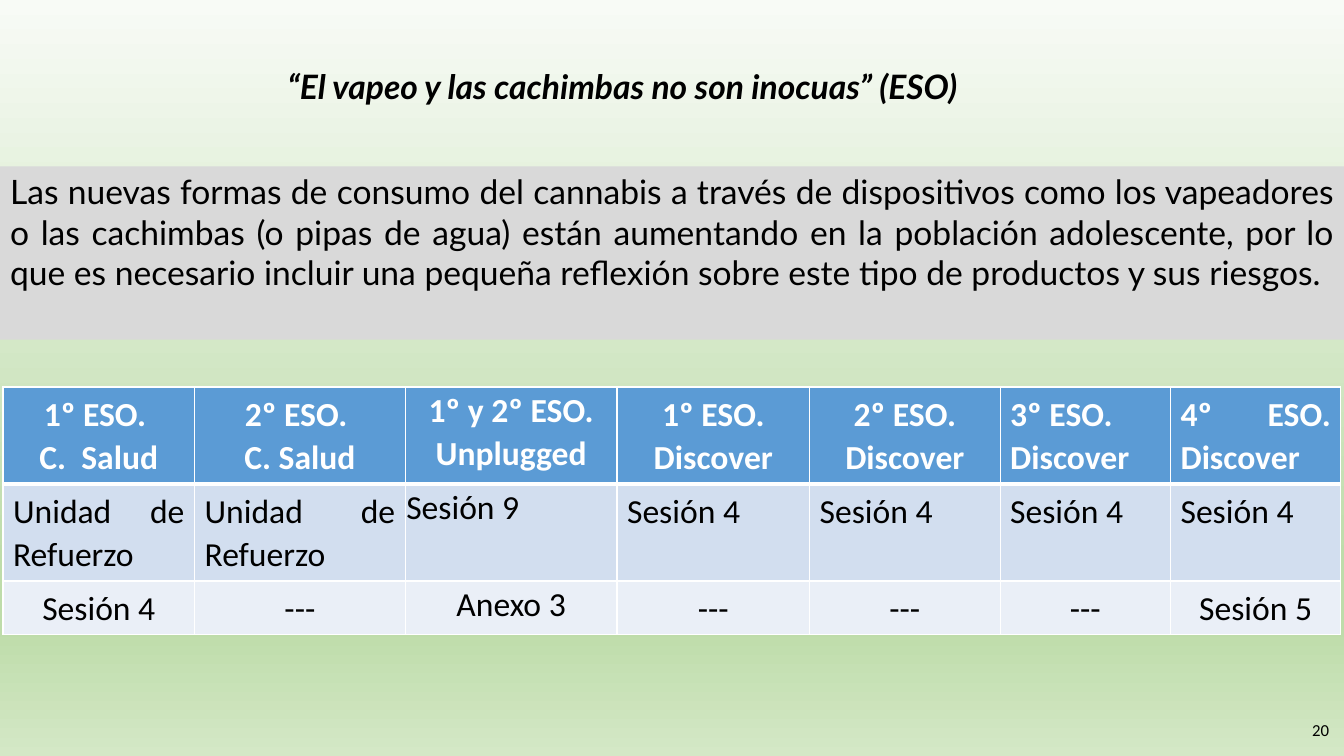
from lxml import etree
from pptx import Presentation
from pptx.dml.color import RGBColor
from pptx.enum import text
from pptx.oxml import ns
from pptx.util import Inches, Pt

TITLE = "“El vapeo y las cachimbas no son inocuas” (ESO)"
BODY = (
    "Las nuevas formas de consumo del cannabis a través de dispositivos como los "
    "vapeadores o las cachimbas (o pipas de agua) están aumentando en la población "
    "adolescente, por lo que es necesario incluir una pequeña reflexión sobre este "
    "tipo de productos y sus riesgos."
)
PAGE_NUMBER = "20"
SESSIONS = [
    ["1º ESO. \nC.  Salud", "2º ESO. \nC. Salud", "1º y 2º ESO.\nUnplugged",
     "1º ESO. Discover", "2º ESO. Discover", "3º ESO. \nDiscover", "4º ESO. Discover"],
    ["Unidad de Refuerzo"] * 2 + ["Sesión 9"] + ["Sesión 4"] * 4,
    ["Sesión 4", "---", "Anexo 3", "---", "---", "---", "Sesión 5"],
]
COLUMN_WIDTHS = [1.9, 2.09, 2.1, 1.91, 1.89, 1.69, 1.69]
ROW_HEIGHTS = [0.95, 0.95, 0.52]
COLORS = {"black": "000000", "white": "FFFFFF", "panel": "D9D9D9"}
ROW_FILLS = ["5B9BD5", "D2DEEF", "EAEFF7"]
BACKGROUND = [(0, "F8FBF6"), (74, "BEDCAA"), (83, "BEDCAA"), (100, "D4E8C6")]
TIGHT_COLUMN = 2
FIRST_JUSTIFIED_HEADER = 5
CENTER, JUSTIFY, RIGHT = (text.PP_ALIGN.CENTER, text.PP_ALIGN.JUSTIFY,
                          text.PP_ALIGN.RIGHT)


def paint(fill, color):
    fill.solid()
    fill.fore_color.rgb = RGBColor.from_string(color)


def place(shape, *box):
    for name, value in zip(("left", "top", "width", "height"), box):
        setattr(shape, name, Inches(value))


def write(frame, wording, align, color=COLORS["black"], spacing=1.0, **font):
    """Fill a text frame, one paragraph per line of wording."""
    frame.word_wrap = True
    frame.text = wording
    for para in frame.paragraphs:
        para.alignment, para.line_spacing = align, spacing
        para.space_before = para.space_after = Pt(0)
        for span in para.runs:
            for name, value in font.items():
                setattr(span.font, name, value)
            span.font.color.rgb = RGBColor.from_string(color)


def add_border(cell, side, points):
    line = etree.SubElement(cell._tc.get_or_add_tcPr(), ns.qn(f"a:ln{side}"),
                            w=str(Pt(points)))
    solid = etree.SubElement(line, ns.qn("a:solidFill"))
    etree.SubElement(solid, ns.qn("a:srgbClr"), val=COLORS["white"])


def paint_background(page):
    fill = page.background.fill
    fill.gradient()
    fill.gradient_angle = 270
    stops = next(page._element.iter(ns.qn("a:gsLst")))
    for stop in list(stops):
        stops.remove(stop)
    for percent, color in BACKGROUND:
        stop = etree.SubElement(stops, ns.qn("a:gs"), pos=str(percent * 1000))
        etree.SubElement(stop, ns.qn("a:srgbClr"), val=color)


def add_sessions(page):
    table = page.shapes.add_table(
        len(SESSIONS), len(COLUMN_WIDTHS), Inches(0.03), Inches(3.84),
        Inches(sum(COLUMN_WIDTHS)), Inches(sum(ROW_HEIGHTS))).table
    for column, width in zip(table.columns, COLUMN_WIDTHS):
        column.width = Inches(width)
    for r, wordings in enumerate(SESSIONS):
        table.rows[r].height = Inches(ROW_HEIGHTS[r])
        header = r == 0
        for c, wording in enumerate(wordings):
            cell = table.cell(r, c)
            for side in "LRTB":
                thick = (header and side == "B") or (r == 1 and side == "T")
                add_border(cell, side, 3 if thick else 1)
            paint(cell.fill, ROW_FILLS[r])
            if c == TIGHT_COLUMN:
                cell.margin_left = cell.margin_right = cell.margin_top = Inches(0.01)
                cell.margin_bottom = 0
            justified = r == 1 or (header and c >= FIRST_JUSTIFIED_HEADER)
            write(cell.text_frame, wording, JUSTIFY if justified else CENTER,
                  COLORS["white" if header else "black"], 1.06,
                  name="Calibri", size=Pt(24), bold=header)


def main():
    deck = Presentation()
    deck.slide_width, deck.slide_height = Inches(13.33), Inches(7.5)
    page = deck.slides.add_slide(deck.slide_layouts[1])
    paint_background(page)

    title, body = page.placeholders
    place(title, 1.25, 0.6, 9.85, 0.88)
    place(body, 0, 1.65, 13.33, 1.72)
    paint(body.fill, COLORS["panel"])
    for box in (title, body):
        box.text_frame.auto_size = text.MSO_AUTO_SIZE.NONE
        box.text_frame.vertical_anchor = text.MSO_ANCHOR.TOP
    write(title.text_frame, TITLE, CENTER,
          name="Lato", size=Pt(24), bold=True, italic=True)
    write(body.text_frame, BODY, JUSTIFY, name="Lato", size=Pt(24))
    properties = body.text_frame.paragraphs[0]._p.get_or_add_pPr()
    properties.set("marL", "0")
    properties.set("indent", "0")
    etree.SubElement(properties, ns.qn("a:buNone"))

    add_sessions(page)

    number = page.shapes.add_textbox(
        Inches(12.49), Inches(7.04), Inches(0.79), Inches(0.4))
    number.text_frame.vertical_anchor = text.MSO_ANCHOR.MIDDLE
    write(number.text_frame, PAGE_NUMBER, RIGHT, name="Calibri", size=Pt(12))
    deck.save("out.pptx")


if __name__ == "__main__":
    main()
